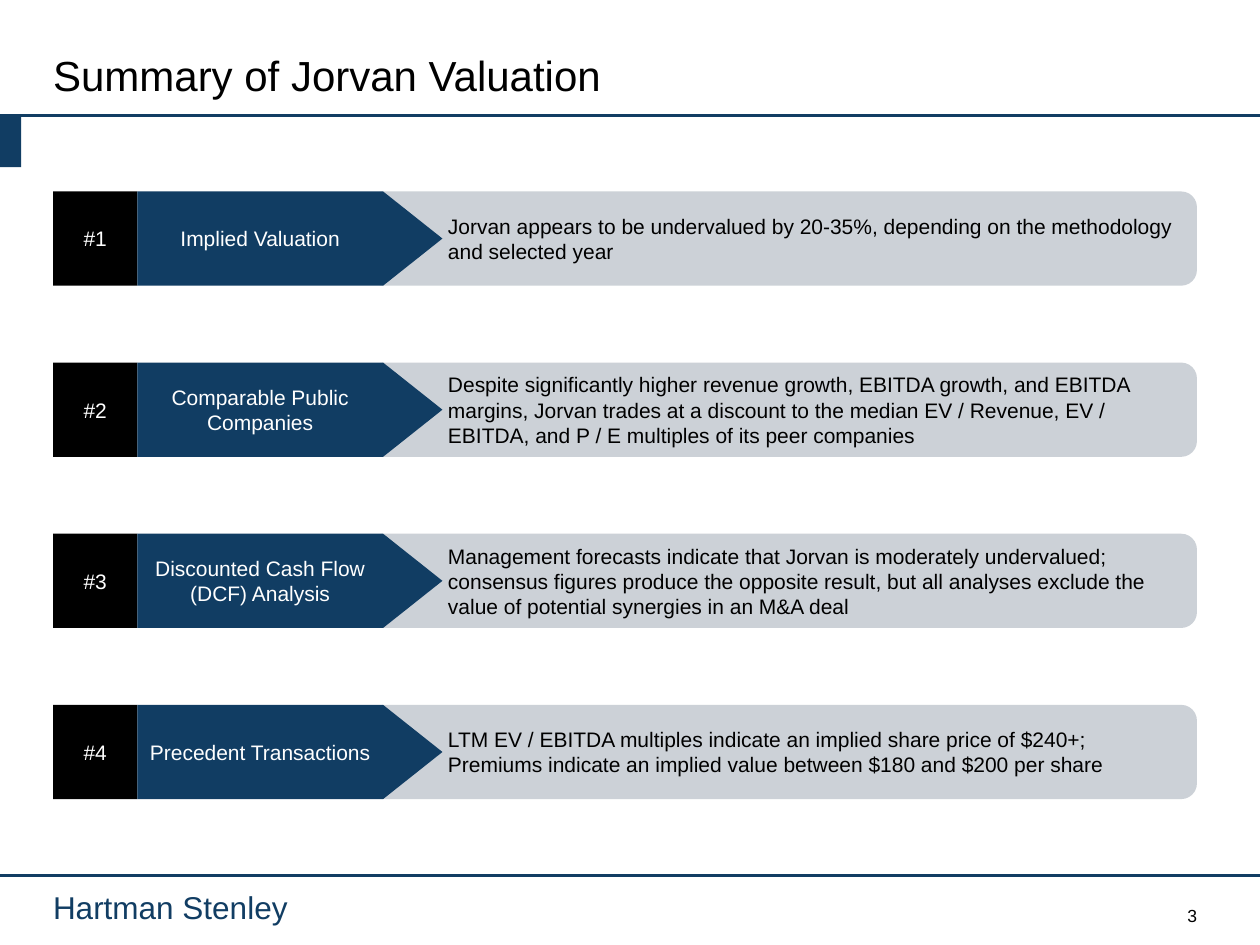
from lxml.etree import SubElement
from pptx import Presentation
from pptx.dml.color import RGBColor
from pptx.enum.shapes import MSO_CONNECTOR as Connector, MSO_SHAPE as Shape
from pptx.enum.text import MSO_ANCHOR as Anchor, PP_ALIGN as Align
from pptx.oxml.ns import qn
from pptx.util import Cm, Pt

COLORS = {"navy": "113D63", "black": "000000", "white": "FFFFFF", "grey": "CCD1D7"}
FONT = "Arial"
PAGE_W, PAGE_H = 25.4, 19.05
LEFT, CONTENT_W = 1.07, 23.06
ROW_TOP, ROW_H, ROW_PITCH = 3.86, 1.9, 3.45
FINDINGS = [
    ("Implied Valuation",
     "Jorvan appears to be undervalued by 20-35%, depending on the methodology "
     "and selected year"),
    ("Comparable Public Companies",
     "Despite significantly higher revenue growth, EBITDA growth, and EBITDA margins, "
     "Jorvan trades at a discount to the median EV / Revenue, EV / EBITDA, and P / E "
     "multiples of its peer companies"),
    ("Discounted Cash Flow (DCF) Analysis",
     "Management forecasts indicate that Jorvan is moderately undervalued; consensus "
     "figures produce the opposite result, but all analyses exclude the value of "
     "potential synergies in an M&A deal"),
    ("Precedent Transactions",
     "LTM EV / EBITDA multiples indicate an implied share price of $240+; Premiums "
     "indicate an implied value between $180 and $200 per share"),
]


def color(name):
    return RGBColor.from_string(COLORS[name])


def write(box, text, size, ink, align=Align.LEFT, anchor=Anchor.MIDDLE,
          insets=(0.25, 0.13, 0.25, 0.13)):
    """Put one formatted run in a box; insets are left, top, right, bottom in cm."""
    frame = box.text_frame
    frame.word_wrap = True
    frame.vertical_anchor = anchor
    (frame.margin_left, frame.margin_top,
     frame.margin_right, frame.margin_bottom) = map(Cm, insets)
    para = frame.paragraphs[0]
    para.alignment = align
    span = para.add_run()
    span.text = text
    span.font.name = FONT
    span.font.size = Pt(size)
    span.font.color.rgb = color(ink)


def add_block(page, kind, left, top, width, height, fill):
    block = page.shapes.add_shape(kind, Cm(left), Cm(top), Cm(width), Cm(height))
    block.shadow.inherit = False
    block.fill.solid()
    block.fill.fore_color.rgb = color(fill)
    block.line.fill.background()
    return block


def add_rule(page, top):
    """Draw a navy line across the whole page."""
    rule = page.shapes.add_connector(Connector.STRAIGHT, 0, Cm(top), Cm(PAGE_W), Cm(top))
    rule.line.color.rgb = color("navy")
    rule.line.width = Pt(1.75)
    SubElement(rule._element.spPr, qn("a:effectLst"))


def add_label(page, left, top, width, height, text, size, ink, **layout):
    label = page.shapes.add_textbox(Cm(left), Cm(top), Cm(width), Cm(height))
    write(label, text, size, ink, insets=(0, 0, 0, 0), **layout)


def add_header(page, left, top, width, height):
    title = page.shapes.title
    title.left, title.top, title.width, title.height = map(Cm, (left, top, width, height))
    write(title, "Summary of Jorvan Valuation", 24, "black", insets=(0, 0, 0, 0))
    rule_top = top + height + 0.33
    add_rule(page, rule_top)
    add_block(page, Shape.RECTANGLE, 0, rule_top, 0.43, 1.04, "navy")


def add_finding(page, left, top, width, height, number, topic, message):
    number_w, arrow_w, panel_offset = 1.7, 6.15, 6.35
    badge = add_block(page, Shape.RECTANGLE, left, top, number_w, height, "black")
    write(badge, f"#{number}", 12, "white", Align.CENTER)

    panel = add_block(page, Shape.ROUNDED_RECTANGLE, left + panel_offset, top,
                      width - panel_offset, height, "grey")
    write(panel, message, 12, "black", insets=(1.52, 0.13, 0.25, 0.13))

    arrow = add_block(page, Shape.RIGHT_ARROW, left + number_w, top, arrow_w, height, "navy")
    arrow.adjustments[0] = 1
    arrow.adjustments[1] = 0.63
    write(arrow, topic, 12, "white", Align.CENTER)


def add_footer(page, left, top, width):
    number_w = 5.92
    add_rule(page, top)
    add_label(page, left, top + 0.25, 6.35, 0.76, "Hartman Stenley", 18, "navy",
              anchor=Anchor.TOP)
    add_label(page, left + width - number_w, top + 0.59, number_w, 0.43, "3", 10, "black",
              align=Align.RIGHT, anchor=Anchor.BOTTOM)


def main():
    deck = Presentation()
    deck.slide_width, deck.slide_height = Cm(PAGE_W), Cm(PAGE_H)
    page = deck.slides.add_slide(deck.slide_layouts.get_by_name("Title Only"))
    add_header(page, LEFT, 1, 22.86, 1)
    for index, (topic, message) in enumerate(FINDINGS):
        add_finding(page, LEFT, ROW_TOP + index * ROW_PITCH, CONTENT_W, ROW_H,
                    index + 1, topic, message)
    add_footer(page, LEFT, 17.65, CONTENT_W)
    deck.save("out.pptx")


if __name__ == "__main__":
    main()
